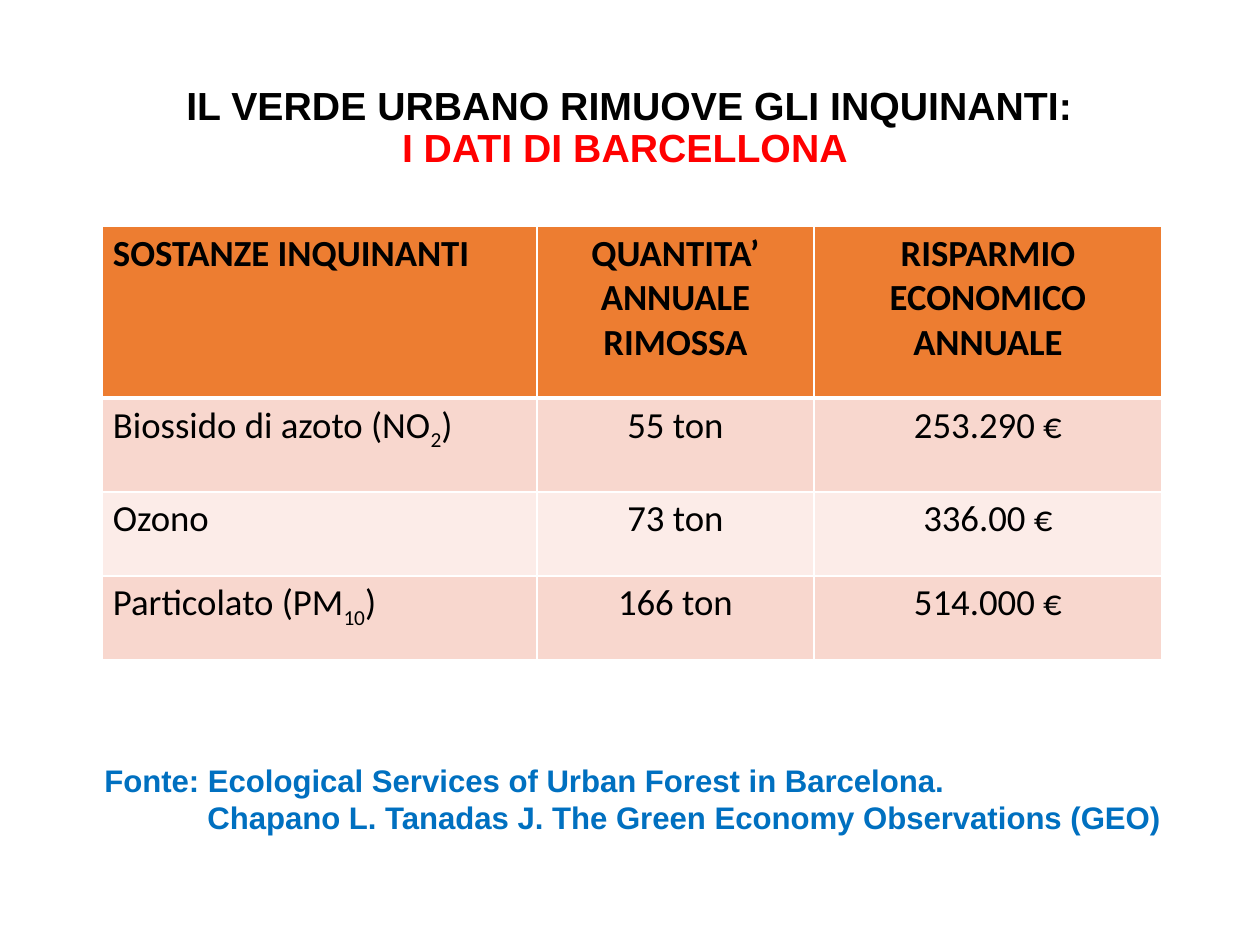
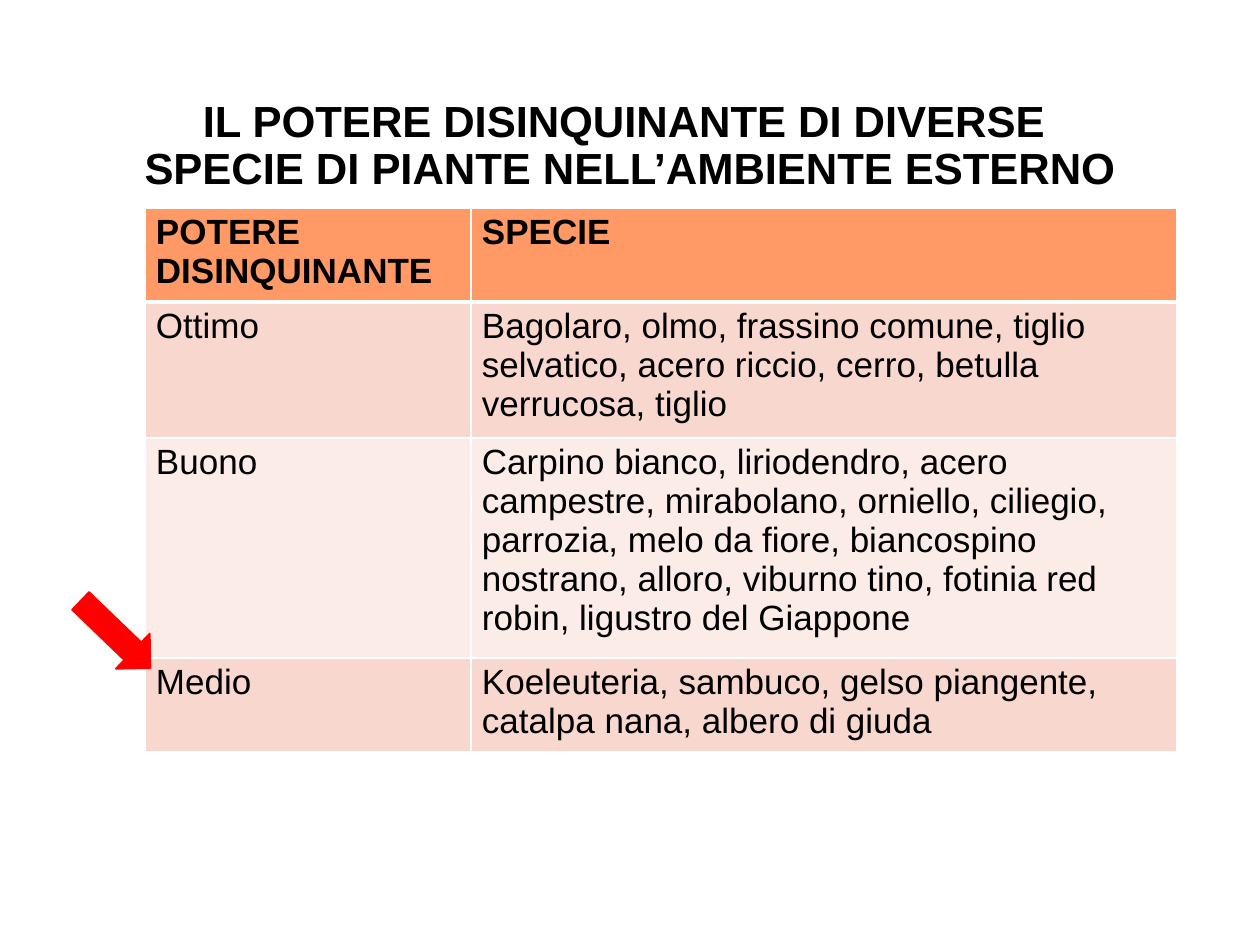
from lxml.etree import SubElement as Sub
from pptx import Presentation
from pptx.dml.color import RGBColor
from pptx.enum.shapes import MSO_SHAPE as Shape
from pptx.enum.text import MSO_ANCHOR as Anchor, PP_ALIGN as Align
from pptx.oxml.ns import qn
from pptx.util import Pt

PX = 914400 / 126
BLACK = RGBColor(0x00, 0x00, 0x00)
RED = RGBColor(0xFF, 0x00, 0x00)
BLUE = RGBColor(0x00, 0x70, 0xC0)
ORANGE = RGBColor(0xED, 0x7D, 0x31)
PEACH = RGBColor(0xFF, 0x99, 0x66)
ROSE = RGBColor(0xF8, 0xD7, 0xCE)
PALE = RGBColor(0xFC, 0xEC, 0xE8)


def say(par, text, size, face="Arial", color=BLACK, bold=True):
    for i, part in enumerate(text.split("_")):
        run = par.add_run()
        run.text = part
        font = run.font
        font.size, font.name, font.bold = Pt(size), face, bold
        font.color.rgb = color
        if i % 2:
            run._r.get_or_add_rPr().set("baseline", "-25000")


def grid(slide, left, top, cols, rows, data, head, size, face, mid):
    box = [round(n * PX) for n in (left, top, sum(cols), sum(rows))]
    table = slide.shapes.add_table(len(rows), len(cols), *box).table
    table.first_row = table.horz_banding = False
    for col, wide in zip(table.columns, cols):
        col.width = round(wide * PX)
    for y, (row, high) in enumerate(zip(table.rows, rows)):
        row.height = round(high * PX)
        for x, cell in enumerate(row.cells):
            cell.margin_left = cell.margin_right = round(11 * PX)
            cell.margin_top = cell.margin_bottom = round(5 * PX)
            for side in "LRTB":
                thick = (y, side) in ((0, "B"), (1, "T"))
                line = Sub(cell._tc.get_or_add_tcPr(), qn("a:ln" + side), w=str(Pt(3 if thick else 1)))
                Sub(Sub(line, qn("a:solidFill")), qn("a:srgbClr"), val="FFFFFF")
            cell.fill.solid()
            cell.fill.fore_color.rgb = head if y == 0 else (PALE, ROSE)[y % 2]
            frame = cell.text_frame
            for i, text in enumerate(data[y][x].split("\n")):
                par = frame.add_paragraph() if i else frame.paragraphs[0]
                par.alignment = Align.CENTER if mid and x else Align.LEFT
                say(par, text, size, face, bold=y == 0)


deck = Presentation()
deck.slide_width, deck.slide_height = round(1260 * PX), round(945 * PX)

titles = [
    (82, 93, 22.4, [("IL VERDE URBANO RIMUOVE GLI INQUINANTI:", BLACK), ("I DATI DI BARCELLONA ", RED)]),
    (77, 140, 24.9, [("IL POTERE DISINQUINANTE DI DIVERSE ", BLACK),
                     ("SPECIE DI PIANTE NELL’AMBIENTE ESTERNO", BLACK)]),
]
for top, high, size, lines in titles:
    slide = deck.slides.add_slide(deck.slide_layouts[6])
    box = slide.shapes.add_textbox(*[round(n * PX) for n in (63, top, 1134, high)])
    frame = box.text_frame
    frame.word_wrap = True
    frame.vertical_anchor = Anchor.MIDDLE
    par = frame.paragraphs[0]
    par.alignment, par.line_spacing = Align.CENTER, 0.9
    for i, (text, color) in enumerate(lines):
        if i:
            par.add_line_break()
        say(par, text, size, color=color)

city, plants = deck.slides

gases = [
    ("SOSTANZE INQUINANTI", "QUANTITA’ ANNUALE\nRIMOSSA", "RISPARMIO ECONOMICO ANNUALE"),
    ("Biossido di azoto (NO_2_)", "55 ton", "253.290 €"),
    ("Ozono", "73 ton", "336.00 €"),
    ("Particolato (PM_10_)", "166 ton", "514.000 €"),
]
grid(city, 102, 226, [435, 277, 348], [172, 94, 84, 84], gases, ORANGE, 21, "Calibri", True)

source = city.shapes.add_textbox(*[round(n * PX) for n in (92, 755, 1085, 88)]).text_frame
source.word_wrap = True
say(source.paragraphs[0], "Fonte: Ecological Services of Urban Forest in Barcelona.", 17.8, color=BLUE)
par = source.add_paragraph()
par._p.get_or_add_pPr().set("marL", str(round(103 * PX)))
say(par, "Chapano L. Tanadas J. The Green Economy Observations (GEO)", 17.8, color=BLUE)

species = [
    ("POTERE DISINQUINANTE", "SPECIE"),
    ("Ottimo", "Bagolaro, olmo, frassino comune, tiglio selvatico, acero riccio, cerro, "
               "betulla verrucosa, tiglio"),
    ("Buono", "Carpino bianco, liriodendro, acero campestre, mirabolano, orniello, ciliegio, "
              "parrozia, melo da fiore, biancospino\n"
              "nostrano, alloro, viburno tino, fotinia red robin, ligustro del Giappone"),
    ("Medio", "Koeleuteria, sambuco, gelso piangente, catalpa nana, albero di giuda"),
]
grid(plants, 145, 208, [326, 706], [93, 134, 217, 93], species, PEACH, 20, "Arial", False)

arrow = plants.shapes.add_shape(Shape.RIGHT_ARROW, *[round(n * PX) for n in (67, 610, 97, 49)])
arrow.rotation = 43.9
arrow.shadow.inherit = False
arrow.fill.solid()
arrow.fill.fore_color.rgb = arrow.line.color.rgb = RED
arrow.line.width = Pt(1)

deck.save("out.pptx")
